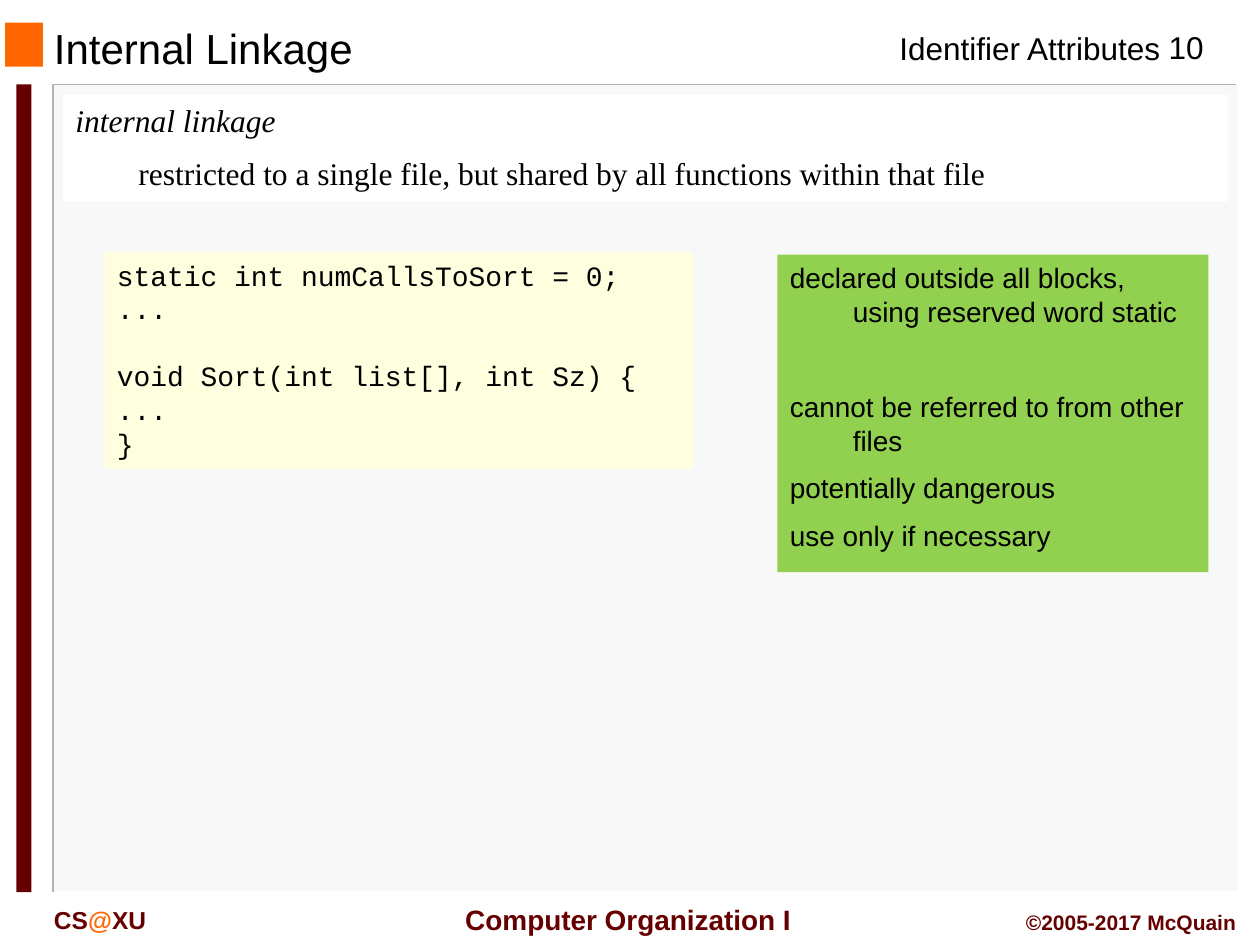
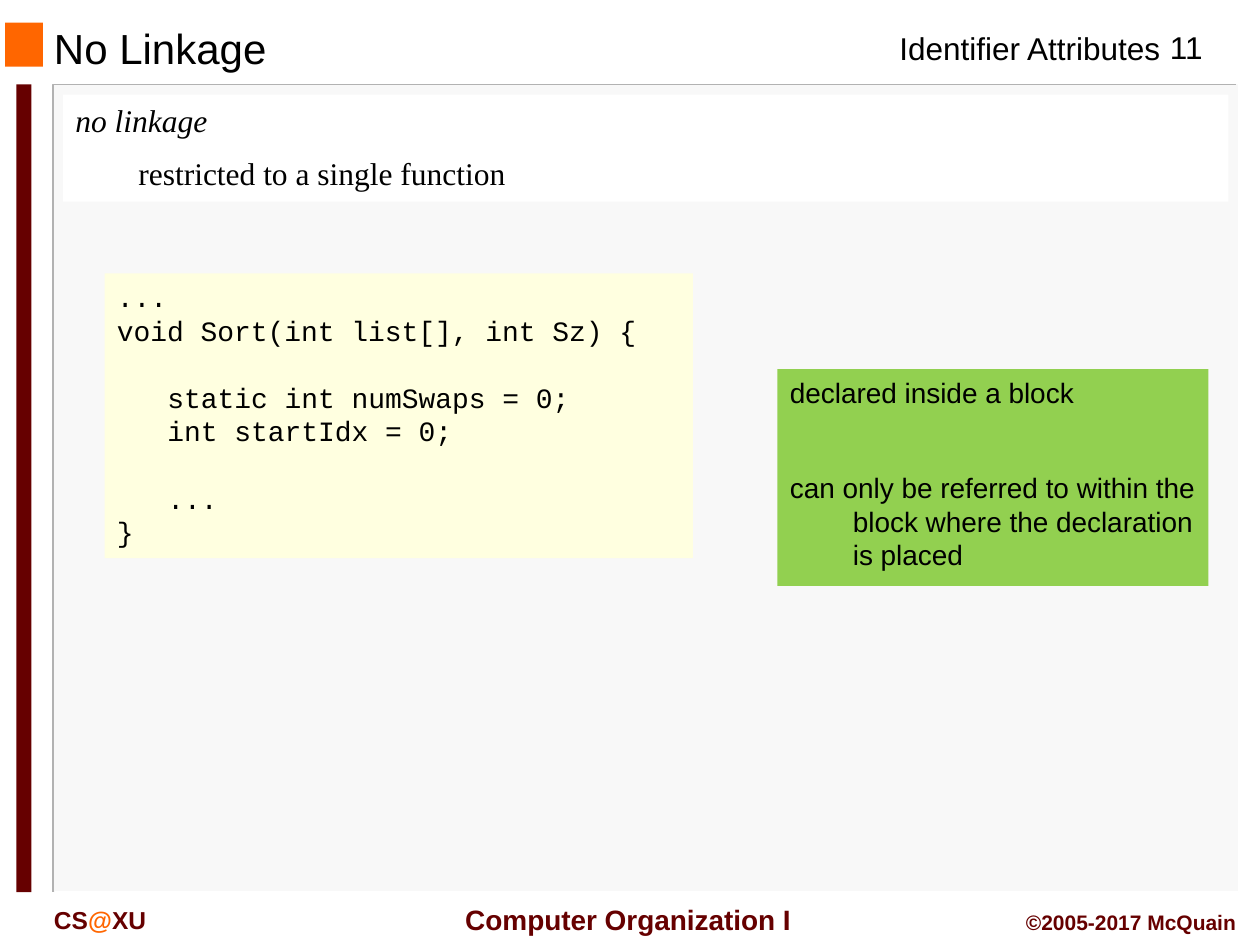
"""Build two slides on the linkage of identifiers in C."""
from dataclasses import dataclass

from pptx import Presentation
from pptx import util as u
from pptx.dml.color import RGBColor
from pptx.enum import shapes, text


@dataclass(frozen=True)
class Theme:
    black: str = "000000"
    white: str = "FFFFFF"
    maroon: str = "660000"
    orange: str = "FF6600"
    canvas: str = "F8F8F8"
    edge: str = "B2B2B2"
    code_fill: str = "FFFFE0"
    note_fill: str = "92D050"
    sans: str = "Arial"
    serif: str = "Times New Roman"
    mono: str = "Courier New"
    title_size: int = 24
    heading_size: int = 18
    body_size: int = 16
    course_size: int = 14
    credit_size: int = 12
    line_factor: float = 1.2
    gap_factor: float = 0.5
    hang: float = 0.5


THEME = Theme()
LEFT, CENTER, RIGHT = text.PP_ALIGN.LEFT, text.PP_ALIGN.CENTER, text.PP_ALIGN.RIGHT
TOP, MIDDLE = text.MSO_ANCHOR.TOP, text.MSO_ANCHOR.MIDDLE


def add_run(paragraph, words, size, font=THEME.sans, color=THEME.black, bold=False, italic=False):
    """Append one formatted run."""
    run = paragraph.add_run()
    run.text = words
    run.font.name, run.font.size = font, u.Pt(size)
    run.font.bold, run.font.italic = bold, italic
    run.font.color.rgb = RGBColor.from_string(color)


def set_indent(paragraph, left, first):
    """Set the left margin and first-line indent in inches."""
    properties = paragraph._p.get_or_add_pPr()
    properties.set("marL", str(u.Inches(left)))
    properties.set("indent", str(u.Inches(first)))


def prepare_frame(shape, anchor=TOP, wrap=True):
    """Set the insets, anchor and wrapping of a text frame."""
    frame = shape.text_frame
    frame.margin_left = frame.margin_right = u.Inches(0.1)
    frame.margin_top = frame.margin_bottom = u.Inches(0.05)
    frame.vertical_anchor, frame.word_wrap = anchor, wrap
    return frame


def add_block(slide, bounds, fill):
    """Add a plain filled rectangle."""
    shape = slide.shapes.add_shape(shapes.MSO_SHAPE.RECTANGLE, *map(u.Inches, bounds))
    shape.shadow.inherit = False
    shape.fill.solid()
    shape.fill.fore_color.rgb = RGBColor.from_string(fill)
    shape.line.fill.background()
    return shape


def add_edge(slide, points, color):
    """Add an open outline through the given points."""
    start, *rest = [tuple(map(u.Inches, point)) for point in points]
    builder = slide.shapes.build_freeform(*start)
    builder.add_line_segments(rest, close=False)
    shape = builder.convert_to_shape()
    shape.shadow.inherit = False
    shape.fill.background()
    shape.line.color.rgb = RGBColor.from_string(color)
    shape.line.width = u.Pt(1)


def add_label(slide, bounds, runs, size, align=LEFT, anchor=TOP, wrap=True, bold=False):
    """Add a one-line label from (words, color) runs."""
    box = slide.shapes.add_textbox(*map(u.Inches, bounds))
    paragraph = prepare_frame(box, anchor, wrap).paragraphs[0]
    paragraph.alignment = align
    for words, color in runs:
        add_run(paragraph, words, size, color=color, bold=bold)


def add_panel(slide, bounds, fill, size):
    """Add a filled text panel and return a function that adds its paragraphs."""
    frame = prepare_frame(add_block(slide, bounds, fill))
    line_height = size * THEME.line_factor
    paragraphs = []

    def next_paragraph(left=0, first=0, gap=0, skip=False):
        """Start a paragraph, optionally leaving one line open above it."""
        paragraph = frame.add_paragraph() if paragraphs else frame.paragraphs[0]
        paragraphs.append(paragraph)
        paragraph.alignment = LEFT
        paragraph.line_spacing = u.Pt(line_height)
        paragraph.space_before = u.Pt(gap + (line_height + gap if skip else 0))
        set_indent(paragraph, left, first)
        return paragraph

    return next_paragraph


def add_definition(slide, term, meaning):
    """Add the italic term with its indented meaning."""
    size = THEME.heading_size
    next_paragraph = add_panel(slide, (0.5, 0.75, 9.25, 0.85), THEME.white, size)
    gap = size * THEME.gap_factor
    add_run(next_paragraph(), term, size, THEME.serif, italic=True)
    add_run(next_paragraph(left=THEME.hang, gap=gap), meaning, size, THEME.serif)


def add_code(slide, top, height, lines):
    """Add a code panel from (words, indent level, skip) lines."""
    size = THEME.body_size
    next_paragraph = add_panel(slide, (0.83, top, 4.67, height), THEME.code_fill, size)
    for words, level, skip in lines:
        add_run(next_paragraph(left=0.4 * level, skip=skip), words, size, THEME.mono)


def add_notes_panel(slide, top, height, notes):
    """Add the green panel of hanging remarks from (words, skip) notes."""
    size = THEME.body_size
    next_paragraph = add_panel(slide, (6.17, top, 3.42, height), THEME.note_fill, size)
    for words, skip in notes:
        paragraph = next_paragraph(THEME.hang, -THEME.hang, size * THEME.gap_factor, skip)
        add_run(paragraph, words, size)


def add_base(presentation, title, number):
    """Add a slide with the shared frame, header and footer."""
    slide = presentation.slides.add_slide(presentation.slide_layouts[6])
    maroon, black = THEME.maroon, THEME.black
    add_block(slide, (0.43, 0.67, 9.4, 6.41), THEME.canvas)
    add_edge(slide, [(9.81, 0.67), (0.42, 0.67), (0.42, 7.08)], THEME.edge)
    add_edge(slide, [(9.83, 0.67), (9.83, 7.08), (0.44, 7.08)], THEME.white)
    add_block(slide, (0.04, 0.18, 0.3, 0.35), THEME.orange)
    add_block(slide, (0.13, 0.67, 0.12, 6.41), maroon)
    add_label(slide, (7.04, 0.18, 2.29, 0.4), [("Identifier Attributes", black)],
              THEME.heading_size, wrap=False)
    add_label(slide, (3.5, 7.11, 2.91, 0.37), [(" Computer Organization I", maroon)],
              THEME.body_size, CENTER, MIDDLE, wrap=False, bold=True)
    add_label(slide, (9.08, 0.17, 0.67, 0.4), [(str(number), black)], THEME.heading_size, CENTER)
    add_label(slide, (0.33, 7.13, 1.5, 0.33),
              [("CS", maroon), ("@", THEME.orange), ("XU", maroon)], THEME.course_size, bold=True)
    add_label(slide, (7.83, 7.17, 2.08, 0.3), [("©2005-2017 McQuain", maroon)],
              THEME.credit_size, RIGHT, bold=True)
    add_label(slide, (0.33, 0.19, 6.33, 0.38), [(title, black)], THEME.title_size, anchor=MIDDLE)
    return slide


def add_internal_linkage(presentation):
    """Add the slide on internal linkage."""
    slide = add_base(presentation, "Internal Linkage", 10)
    add_definition(slide, "internal linkage",
                   "restricted to a single file, but shared by all functions within that file")
    add_code(slide, 2, 1.72, [
        ("static int numCallsToSort = 0;", 0, False),
        ("...", 0, False),
        ("void Sort(int list[], int Sz) {", 0, True),
        ("...", 0, False),
        ("}", 0, False),
    ])
    add_notes_panel(slide, 2.02, 2.52, [
        ("declared outside all blocks, using reserved word static", False),
        ("cannot be referred to from other files", True),
        ("potentially dangerous", False),
        ("use only if necessary", False),
    ])


def add_no_linkage(presentation):
    """Add the slide on identifiers without linkage."""
    slide = add_base(presentation, "No Linkage", 11)
    add_definition(slide, "no linkage", "restricted to a single function")
    add_code(slide, 2.17, 2.26, [
        ("...", 0, False),
        ("void Sort(int list[], int Sz) {", 0, False),
        ("static int numSwaps = 0;", 1, True),
        ("int startIdx = 0;", 1, False),
        ("...", 1, True),
        ("}", 0, False),
    ])
    add_notes_panel(slide, 2.93, 1.72, [
        ("declared inside a block", False),
        ("can only be referred to within the block where the declaration is placed", True),
    ])


def main():
    """Build and save the presentation."""
    presentation = Presentation()
    presentation.slide_width, presentation.slide_height = u.Inches(10), u.Inches(7.5)
    add_internal_linkage(presentation)
    add_no_linkage(presentation)
    presentation.save("out.pptx")


if __name__ == "__main__":
    main()
